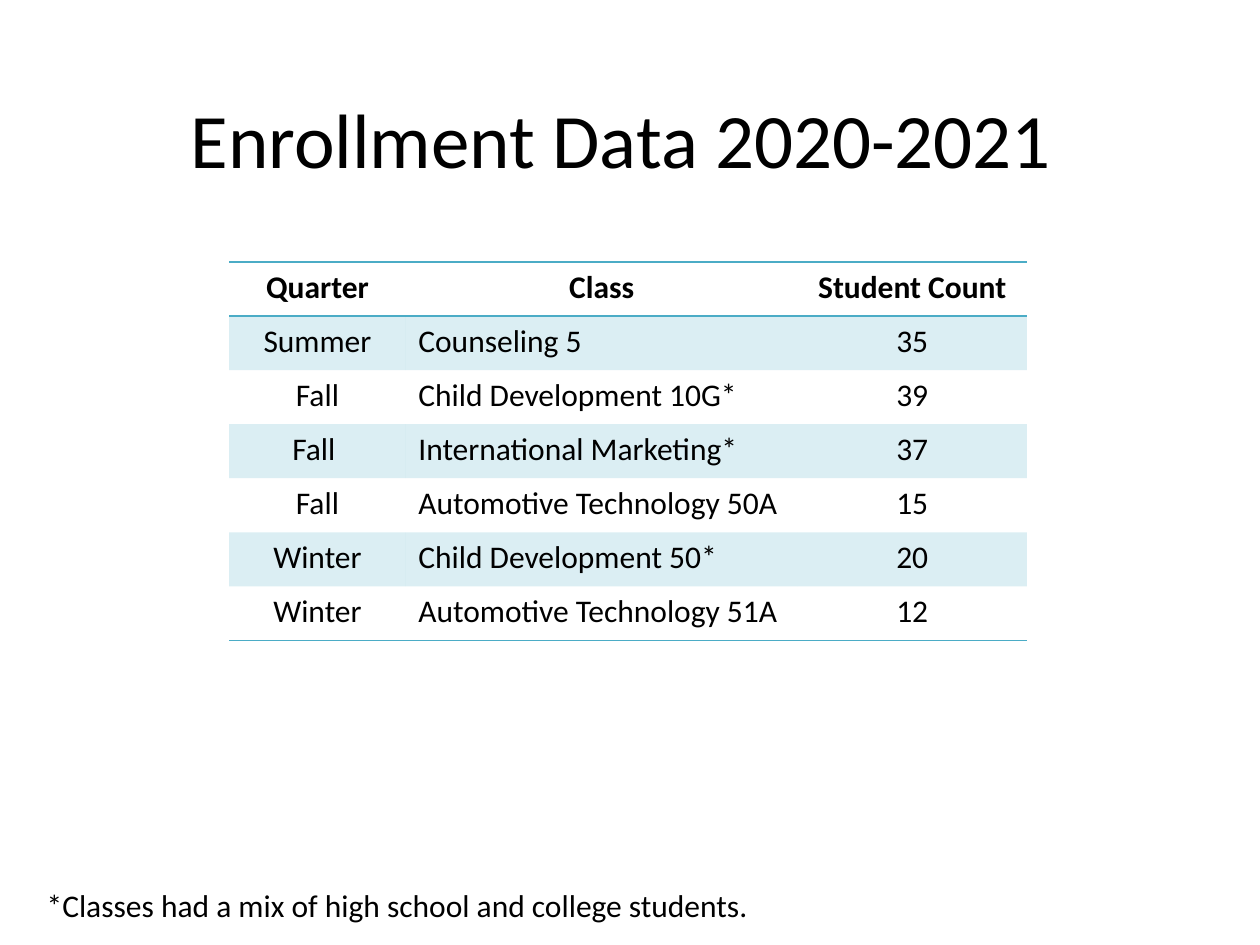
"""Build the enrollment data slide."""
import dataclasses

import pptx
import pptx.dml.color
import pptx.enum.text
import pptx.oxml
import pptx.oxml.ns
import pptx.util

Cm = pptx.util.Cm
Pt = pptx.util.Pt
RGB = pptx.dml.color.RGBColor
ALIGN = pptx.enum.text.PP_ALIGN
ANCHOR = pptx.enum.text.MSO_ANCHOR

BLACK = RGB(0x00, 0x00, 0x00)
TEAL = RGB(0x4B, 0xAC, 0xC6)
PLAIN = "{2D5ABB26-0587-4C30-8999-92F81FD0307C}"
HEADS = ("Quarter", "Class", "Student Count")
WIDTHS = (Cm(3.56), Cm(7.9), Cm(4.62))
HEIGHT = Cm(1.09)


@dataclasses.dataclass
class Course:
    term: str
    name: str
    count: int


COURSES = [
    Course("Summer", "Counseling 5", 35),
    Course("Fall", "Child Development 10G*", 39),
    Course("Fall ", "International Marketing*", 37),
    Course("Fall", "Automotive Technology 50A", 15),
    Course("Winter", "Child Development 50*", 20),
    Course("Winter", "Automotive Technology 51A", 12),
]


def write(frame, text: str, size: int, align, bold: bool = False) -> None:
    """Put one formatted paragraph in a text frame."""
    para = frame.paragraphs[0]
    para.alignment = align
    run = para.add_run()
    run.text = text
    form = {"name": "Calibri", "size": Pt(size), "bold": bold}
    for key, value in form.items():
        setattr(run.font, key, value)
    run.font.color.rgb = BLACK


def rule(cell, side: str) -> None:
    """Draw a teal border on one side of a cell."""
    space = pptx.oxml.ns.nsdecls("a")
    cell._tc.get_or_add_tcPr().append(pptx.oxml.parse_xml(
        f'<a:{side} {space} w="{Pt(1)}"><a:solidFill>'
        f'<a:srgbClr val="{TEAL}"/></a:solidFill></a:{side}>'))


def tint(cell) -> None:
    """Fill a cell with teal at 20 percent opacity."""
    cell.fill.solid()
    cell.fill.fore_color.rgb = TEAL
    color = cell._tc.tcPr.xpath("./a:solidFill/a:srgbClr")[0]
    color.append(pptx.oxml.parse_xml(
        f'<a:alpha {pptx.oxml.ns.nsdecls("a")} val="20000"/>'))


def draw(slide, rows: list[tuple]) -> None:
    """Draw the table with its rules and bands."""
    last = len(rows) - 1
    frame = slide.shapes.add_table(
        len(rows), len(WIDTHS), Cm(4.62), Cm(5.28), sum(WIDTHS), HEIGHT * len(rows))
    frame._element.xpath(".//a:tableStyleId")[0].text = PLAIN
    table = frame.table
    for key in ("first_row", "horz_banding"):
        setattr(table, key, False)
    for col, width in zip(table.columns, WIDTHS):
        col.width = width
    for r, row in enumerate(rows):
        table.rows[r].height = HEIGHT
        for c, text in enumerate(row):
            cell = table.cell(r, c)
            align = ALIGN.LEFT if r and c == 1 else ALIGN.CENTER
            write(cell.text_frame, str(text), 18, align, bold=r == 0)
            if r == 0:
                rule(cell, "lnT")
            if r in (0, last):
                rule(cell, "lnB")
            if r % 2:
                tint(cell)
            else:
                cell.fill.background()


def main() -> None:
    """Build and save the slide."""
    deck = pptx.Presentation()
    deck.slide_width, deck.slide_height = Cm(25.4), Cm(19.05)
    slide = deck.slides.add_slide(deck.slide_layouts[5])

    title = slide.shapes.title
    place = {"left": Cm(1.27), "top": Cm(1.19), "width": Cm(22.86), "height": Cm(3.18)}
    for key, value in place.items():
        setattr(title, key, value)
    title.text_frame.vertical_anchor = ANCHOR.MIDDLE
    write(title.text_frame, "Enrollment Data 2020-2021 ", 44, ALIGN.CENTER)

    draw(slide, [HEADS] + [dataclasses.astuple(item) for item in COURSES])

    note = slide.shapes.add_textbox(Cm(0.69), Cm(17.73), Cm(18.52), Cm(1.02))
    note.text_frame.word_wrap = True
    write(note.text_frame, "*Classes had a mix of high school and college students. ",
          18, ALIGN.LEFT)
    deck.save("out.pptx")


if __name__ == "__main__":
    main()
